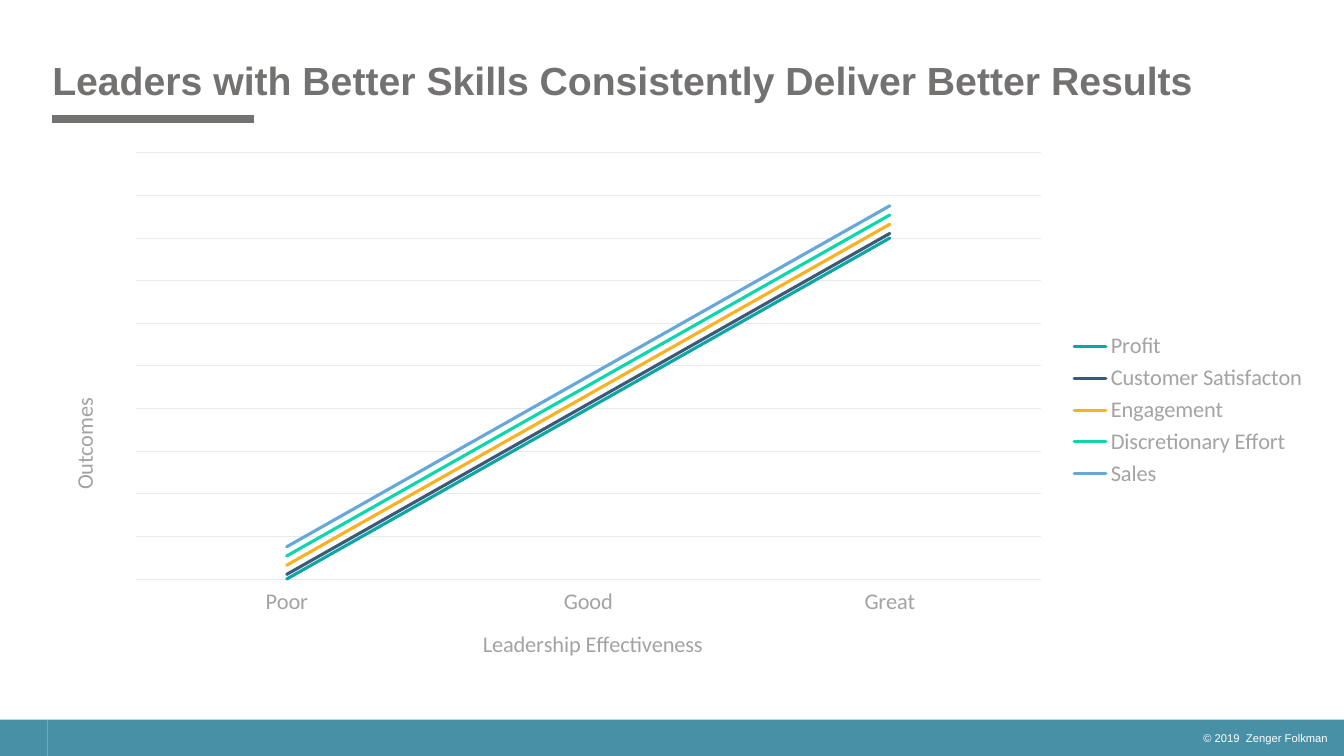
from lxml.etree import SubElement
from pptx import Presentation
from pptx.chart.data import CategoryChartData
from pptx.dml.color import RGBColor
from pptx.enum.chart import XL_CHART_TYPE, XL_LEGEND_POSITION, XL_MARKER_STYLE, XL_TICK_LABEL_POSITION, XL_TICK_MARK
from pptx.enum.shapes import MSO_CONNECTOR, MSO_SHAPE
from pptx.enum.text import MSO_ANCHOR, PP_ALIGN
from pptx.oxml import parse_xml
from pptx.oxml.ns import nsdecls, qn
from pptx.util import Inches, Pt

WHITE = RGBColor(0xFF, 0xFF, 0xFF)
BAND_BLUE = RGBColor(0x48, 0x90, 0xA6)
DARK_GREY = RGBColor(0x74, 0x71, 0x71)
LABEL_GREY = RGBColor(0xA5, 0xA2, 0xA2)
GRID_GREY = RGBColor(0xEA, 0xEA, 0xEA)
TEAL = RGBColor(0x0C, 0xA7, 0xA5)
NAVY = RGBColor(0x3A, 0x5A, 0x79)
AMBER = RGBColor(0xFB, 0xB1, 0x21)
MINT = RGBColor(0x0C, 0xD6, 0xAB)
SKY = RGBColor(0x66, 0xA8, 0xDA)

SKILL_LEVELS = ("Poor", "Good", "Great")
OUTCOMES = (
    ("Profit", (19, 56, 93), TEAL),
    ("Customer Satisfacton", (20, 57, 94), NAVY),
    ("Engagement", (22, 59, 96), AMBER),
    ("Discretionary Effort", (24, 61, 98), MINT),
    ("Sales", (26, 63, 100), SKY),
)
AXIS_MIN, GRID_STEP, GRID_COUNT = 19, 9.25, 10


def style_font(font, size, color, name, bold=False):
    font.size, font.name, font.bold = Pt(size), name, bold
    font.color.rgb = color


def style_line(line, color, width):
    line.color.rgb = color
    line.width = Pt(width)


def place(element, inner=False, **fractions):
    """Fix a chart part's layout as fractions of the chart's x, y, w and h."""
    for old in element.findall(qn("c:layout")):
        element.remove(old)
    layout = parse_xml(f"<c:layout {nsdecls('c')}><c:manualLayout/></c:layout>")
    manual = layout[0]
    if inner:
        SubElement(manual, qn("c:layoutTarget")).set("val", "inner")
    for key in ("x", "y"):
        SubElement(manual, qn(f"c:{key}Mode")).set("val", "edge")
    for key, value in fractions.items():
        SubElement(manual, qn(f"c:{key}")).set("val", str(value))
    text = element.find(qn("c:tx"))
    element.insert(0 if text is None else element.index(text) + 1, layout)


class ResultsSlide:
    heading_font = "Arial"
    chart_font = "Calibri"
    chart_size = 16

    def __init__(self, deck):
        self.slide = deck.slides.add_slide(deck.slide_layouts[6])
        self.shapes = self.slide.shapes

    def band(self, left, top, width, height):
        band = self.shapes.add_shape(
            MSO_SHAPE.RECTANGLE, Inches(left), Inches(top), Inches(width), Inches(height))
        band.shadow.inherit = False
        band.fill.solid()
        band.fill.fore_color.rgb = BAND_BLUE
        band.line.fill.background()

    def rule(self, left, right, y, color, width):
        rule = self.shapes.add_connector(
            MSO_CONNECTOR.STRAIGHT, Inches(left), Inches(y), Inches(right), Inches(y))
        style_line(rule.line, color, width)
        SubElement(rule._element.spPr, qn("a:effectLst"))

    def text(self, words, left, top, width, height, *, size, color, bold=False,
             align=PP_ALIGN.LEFT, anchor=MSO_ANCHOR.TOP, spacing=1.0):
        box = self.shapes.add_textbox(Inches(left), Inches(top), Inches(width), Inches(height))
        frame = box.text_frame
        frame.word_wrap = True
        frame.vertical_anchor = anchor
        paragraph = frame.paragraphs[0]
        paragraph.alignment, paragraph.line_spacing = align, spacing
        run = paragraph.add_run()
        run.text = words
        style_font(run.font, size, color, self.heading_font, bold)

    def axis_title(self, axis, words, x, y):
        title = axis.axis_title
        title.text_frame.text = words
        run = title.text_frame.paragraphs[0].runs[0]
        style_font(run.font, self.chart_size, LABEL_GREY, self.chart_font)
        place(title._element, x=x, y=y)
        return title

    def line_chart(self, left, top, width, height):
        data = CategoryChartData()
        data.categories = SKILL_LEVELS
        for name, values, _ in OUTCOMES:
            data.add_series(name, values)
        chart = self.shapes.add_chart(
            XL_CHART_TYPE.LINE, Inches(left), Inches(top), Inches(width), Inches(height), data).chart
        chart.has_title = False
        style_font(chart.font, self.chart_size, DARK_GREY, self.chart_font)
        chart.plots[0].vary_by_categories = False
        for series, (_, _, color) in zip(chart.plots[0].series, OUTCOMES):
            series.smooth = False
            series.marker.style = XL_MARKER_STYLE.NONE
            style_line(series.format.line, color, 2.25)
            series.format.line._ln.set("cap", "rnd")
        place(chart._chartSpace.chart.plotArea, inner=True, x=0.066, y=0.02, w=0.715, h=0.795)
        self.style_axes(chart)
        chart.has_legend = True
        chart.legend.position = XL_LEGEND_POSITION.RIGHT
        chart.legend.include_in_layout = False
        style_font(chart.legend.font, self.chart_size, LABEL_GREY, self.chart_font)

    def style_axes(self, chart):
        levels, outcomes = chart.category_axis, chart.value_axis
        levels.major_tick_mark = levels.minor_tick_mark = XL_TICK_MARK.NONE
        levels.tick_label_position = XL_TICK_LABEL_POSITION.LOW
        style_font(levels.tick_labels.font, self.chart_size, LABEL_GREY, self.chart_font)
        style_line(levels.format.line, GRID_GREY, 0.75)
        self.axis_title(levels, "Leadership Effectiveness", 0.337, 0.9)

        outcomes.minimum_scale = AXIS_MIN
        outcomes.maximum_scale = AXIS_MIN + GRID_COUNT * GRID_STEP
        outcomes.major_unit = GRID_STEP
        outcomes.has_major_gridlines = True
        style_line(outcomes.major_gridlines.format.line, GRID_GREY, 0.75)
        title = self.axis_title(outcomes, "Outcomes", 0.01, 0.47)
        title.text_frame._txBody.bodyPr.set("rot", "-5400000")
        title.text_frame._txBody.bodyPr.set("vert", "horz")
        outcomes.visible = False


def main():
    deck = Presentation()
    deck.slide_width, deck.slide_height = Inches(13.33), Inches(7.5)
    page = ResultsSlide(deck)
    page.band(0.47, 7.14, 12.86, 0.36)
    page.band(0, 7.14, 0.47, 0.36)
    page.text("© 2019  Zenger Folkman", 10.27, 7.21, 3, 0.14,
              size=8, color=WHITE, align=PP_ALIGN.RIGHT)
    page.rule(0.52, 2.52, 1.18, DARK_GREY, 5.25)
    page.text("Leaders with Better Skills Consistently Deliver Better Results",
              0.42, 0.62, 12.55, 0.46, size=28, color=DARK_GREY, bold=True,
              anchor=MSO_ANCHOR.BOTTOM, spacing=0.9)
    page.line_chart(0.52, 1.41, 12.55, 5.32)
    deck.save("out.pptx")


if __name__ == "__main__":
    main()
